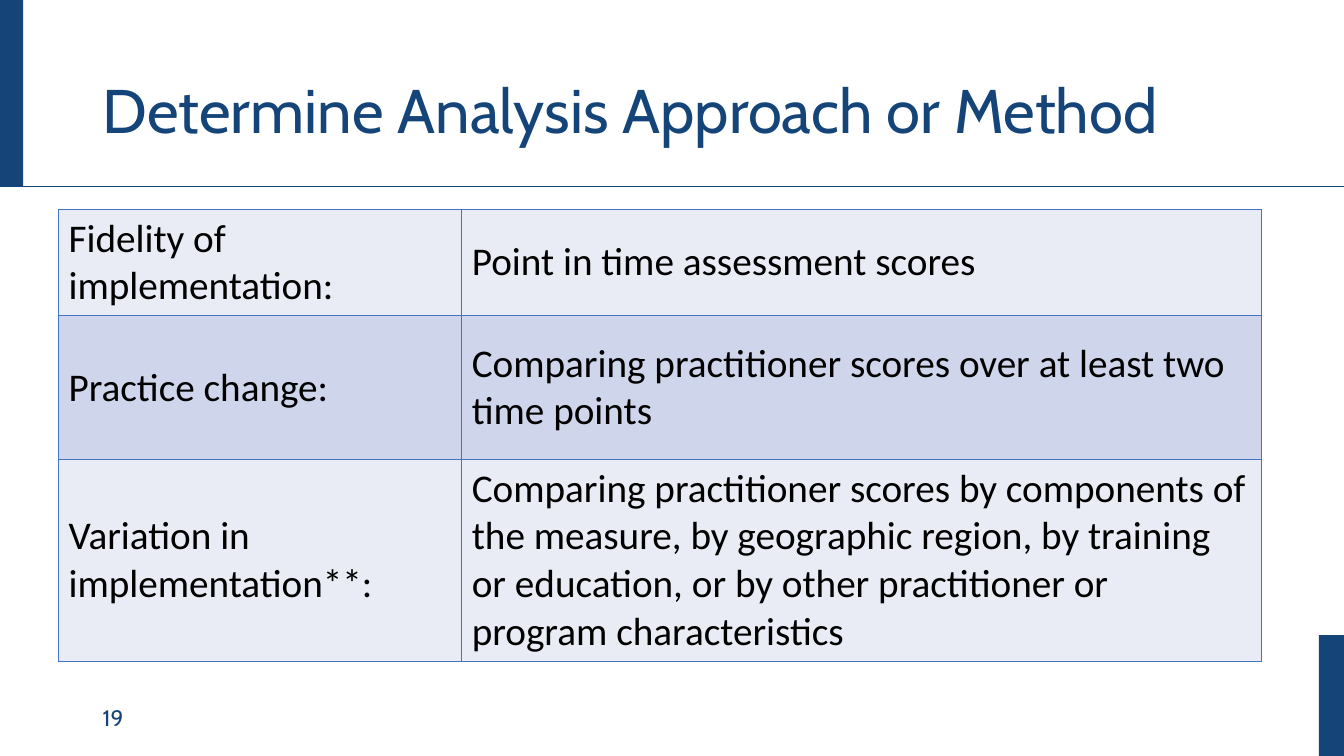
from lxml import etree
from pptx import Presentation
from pptx import util as u
from pptx.dml.color import RGBColor
from pptx.enum import shapes, text
from pptx.oxml.ns import qn

HUES = {"navy": "154578", "black": "000000", "edge": "4472C4",
        "pale": "E9EBF5", "blue": "CFD5EA"}
ROWS = [
    ("Fidelity of implementation:", "Point in time assessment scores"),
    ("Practice change:",
     "Comparing practitioner scores over at least two time points"),
    ("Variation in implementation**:",
     "Comparing practitioner scores by components of the measure, "
     "by geographic region, by training or education, "
     "or by other practitioner or program characteristics"),
]


def hue(name):
    return RGBColor.from_string(HUES[name])


def write(frame, words, size=28, font="Calibri", color="black", lead=None):
    frame.word_wrap = True
    frame.vertical_anchor = text.MSO_ANCHOR.MIDDLE
    para = frame.paragraphs[0]
    para.alignment = text.PP_ALIGN.LEFT
    if lead:
        para.line_spacing = lead
    run = para.add_run()
    run.text = words
    run.font.size = u.Pt(size)
    run.font.name = font
    run.font.color.rgb = hue(color)


class Deck:
    head = "Cabin"
    main = "navy"

    def __init__(self, wide, high):
        self.show = Presentation()
        self.show.slide_width = u.Inches(wide)
        self.show.slide_height = u.Inches(high)
        self.slide = self.show.slides.add_slide(self.show.slide_layouts[5])

    def box(self, *place):
        return [u.Inches(n) for n in place]

    def title(self, words, *place):
        shape = self.slide.shapes.title
        shape.left, shape.top, shape.width, shape.height = self.box(*place)
        shape.text_frame.auto_size = text.MSO_AUTO_SIZE.NONE
        write(shape.text_frame, words, 44, self.head, self.main, 0.9)

    def label(self, words, *place):
        shape = self.slide.shapes.add_textbox(*self.box(*place))
        write(shape.text_frame, words, 16, self.head, self.main)

    def bar(self, *place):
        shape = self.slide.shapes.add_shape(
            shapes.MSO_SHAPE.RECTANGLE, *self.box(*place))
        shape.shadow.inherit = False
        shape.fill.solid()
        shape.fill.fore_color.rgb = hue(self.main)
        shape.line.fill.background()

    def rule(self, *ends):
        line = self.slide.shapes.add_connector(
            shapes.MSO_CONNECTOR.STRAIGHT, *self.box(*ends))
        line.line.color.rgb = hue(self.main)
        line.line.width = u.Pt(0.5)
        etree.SubElement(line._element.spPr, qn("a:effectLst"))

    def edge(self, cell):
        props = cell._tc.get_or_add_tcPr()
        for side in "LRTB":
            line = etree.SubElement(props, qn(f"a:ln{side}"), w=str(u.Pt(1)))
            fill = etree.SubElement(line, qn("a:solidFill"))
            etree.SubElement(fill, qn("a:srgbClr"), val=HUES["edge"])

    def table(self, rows, left, top, cols, highs):
        grid = self.slide.shapes.add_table(
            len(rows), len(cols),
            *self.box(left, top, sum(cols), sum(highs))).table
        grid.first_row = False
        for col, wide in zip(grid.columns, cols):
            col.width = u.Inches(wide)
        for r, (row, high) in enumerate(zip(rows, highs)):
            grid.rows[r].height = u.Inches(high)
            for c, words in enumerate(row):
                cell = grid.cell(r, c)
                self.edge(cell)
                cell.fill.solid()
                cell.fill.fore_color.rgb = hue("blue" if r % 2 else "pale")
                cell.vertical_anchor = text.MSO_ANCHOR.MIDDLE
                write(cell.text_frame, words)
                cell.text_frame.vertical_anchor = None
                cell.text_frame.word_wrap = None


def main():
    deck = Deck(13.33, 7.5)
    deck.bar(0, 0, 0.23, 1.85)
    deck.bar(13.08, 6.3, 0.25, 1.2)
    deck.rule(0, 1.85, 13.33, 1.85)
    deck.title("Determine Analysis Approach or Method", 0.92, 0.4, 11.5, 1.45)
    deck.table(ROWS, 0.58, 2.08, [4, 7.93], [0.82, 1.43, 1.43])
    deck.label("19", 0.92, 6.92, 3, 0.4)
    deck.show.save("out.pptx")


if __name__ == "__main__":
    main()
